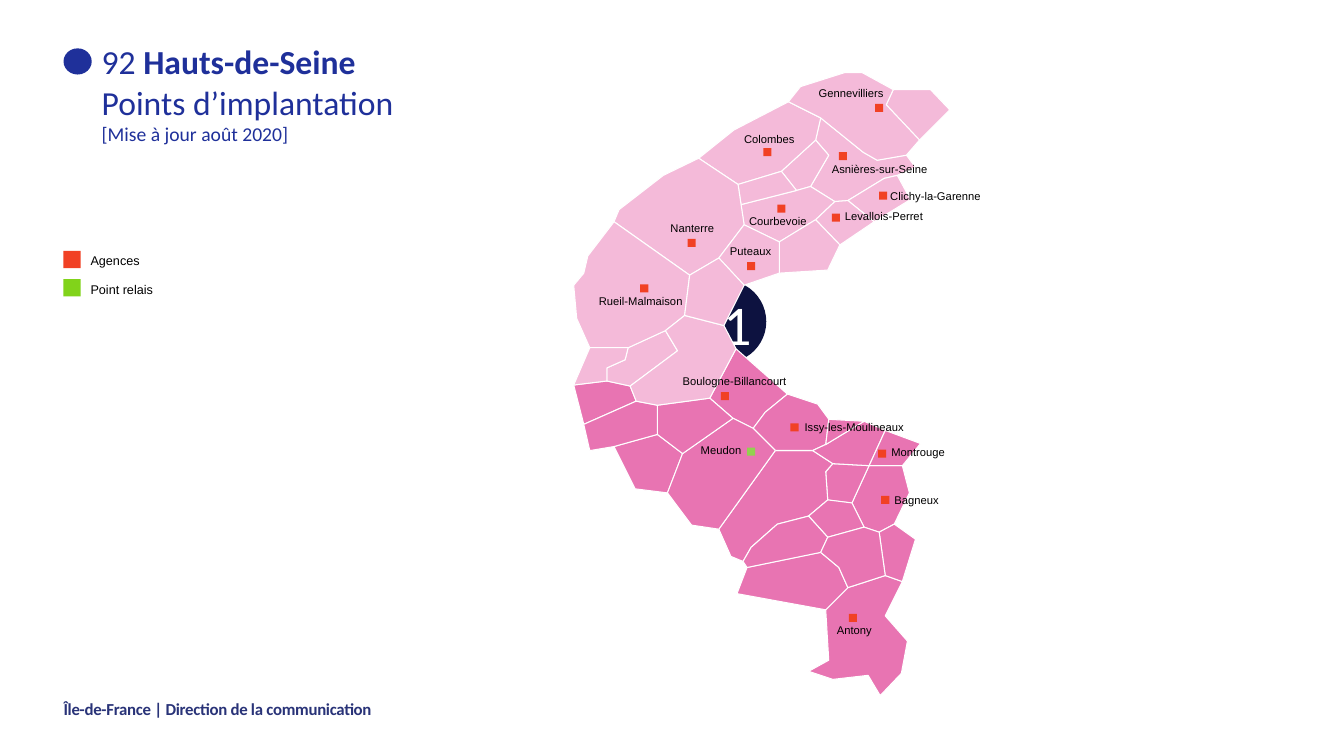
"""Build the Hauts-de-Seine map slide with its agencies and relay point."""
from dataclasses import dataclass

from pptx import Presentation
from pptx import util as u
from pptx.dml.color import RGBColor
from pptx.enum import shapes, text

COLOURS = {
    "south": "E874B2", "north": "F4BAD9", "border": "FFFFFF", "agency": "F14124",
    "relay": "92D050", "relay_key": "81D31A", "title": "1F309A", "footer": "293378",
    "badge": "0D1240", "label": "000000", "number": "FFFFFF",
}
HUNDREDTH = u.Inches(0.01)
MARKER_SIDE = 0.08
KEY_SIDE = 0.17
Junctions = dict[str, tuple[int, int]]

SHARED: Junctions = {
    "1": (569, 382), "2": (602, 378), "3": (625, 383), "4": (631, 398),
    "5": (652, 402), "6": (704, 395), "7": (730, 346),
}
SOUTH: Junctions = SHARED | {
    "a": (802, 666), "b": (826, 674), "c": (861, 670), "d": (873, 690), "e": (894, 668),
    "f": (900, 636), "g": (878, 611), "h": (895, 577), "i": (878, 571), "j": (841, 583),
    "k": (819, 605), "l": (822, 655), "m": (872, 528), "n": (887, 520), "o": (902, 489),
    "p": (895, 462), "q": (585, 447), "r": (862, 462), "s": (845, 499), "t": (857, 523),
    "u": (781, 391), "v": (913, 440), "w": (759, 409), "x": (747, 425), "y": (727, 415),
    "z": (908, 535), "A": (741, 563), "B": (731, 589), "C": (832, 563), "D": (814, 548),
    "E": (826, 460), "F": (819, 468), "G": (821, 496), "H": (630, 485), "I": (662, 489),
    "J": (677, 450), "K": (652, 431), "L": (609, 443), "M": (713, 525), "N": (725, 552),
    "O": (737, 557), "P": (745, 543), "Q": (771, 520), "R": (802, 512), "S": (806, 447),
    "T": (769, 447), "U": (821, 533), "V": (811, 401), "W": (822, 416), "X": (819, 441),
    "Y": (857, 418), "Z": (878, 427), "8": (579, 421), "9": (686, 521),
}
NORTH: Junctions = SHARED | {
    "a": (923, 89), "b": (942, 109), "c": (912, 139), "d": (879, 104), "e": (886, 89),
    "f": (809, 139), "g": (822, 154), "h": (804, 185), "i": (828, 200), "j": (841, 199),
    "k": (877, 177), "l": (890, 174), "m": (908, 166), "n": (899, 154), "o": (870, 159),
    "p": (856, 151), "q": (814, 117), "r": (790, 189), "s": (775, 170), "t": (903, 198),
    "u": (867, 220), "v": (782, 101), "w": (728, 129), "x": (693, 157), "y": (732, 183),
    "z": (809, 218), "A": (773, 240), "B": (738, 223), "C": (735, 203), "D": (672, 348),
    "E": (660, 328), "F": (623, 345), "G": (620, 357), "H": (602, 365), "I": (838, 72),
    "J": (794, 86), "K": (855, 72), "L": (614, 208), "M": (658, 174), "N": (713, 256),
    "O": (684, 273), "P": (609, 220), "Q": (833, 243), "R": (821, 268), "S": (773, 271),
    "T": (738, 283), "U": (583, 254), "V": (679, 313), "W": (585, 345), "X": (572, 316),
    "Y": (569, 283), "Z": (579, 271), "8": (718, 323),
}


@dataclass(frozen=True)
class Region:
    colour: str
    junctions: Junctions
    communes: list[str]


@dataclass(frozen=True)
class Town:
    name: str
    label_at: tuple[float, float]
    marker_at: tuple[float, float]
    kind: str = "agency"
    label_width: float = 1.26


@dataclass(frozen=True)
class Run:
    words: str
    size: float
    bold: bool = False
    break_after: bool = False


REGIONS = [
    Region("south", SOUTH, [
        "abcdefghijkl", "mnoprst", "uwxy67", "mnzhi", "ABkjCD", "srEFG", "HIJKL",
        "MNOPQRGFEST", "stURG", "uVWXSTxw", "YZrESX", "23481", "yxTM9IJ", "Zvpr",
        "OPQRUDA", "tmijCDU", "6yJK5", "WYX", "q845KL"]),
    Region("north", NORTH, [
        "abcde", "fghijklmnopq", "fghrs", "ltujk", "fqvwxys", "hizABCr", "23DEFGH",
        "srCy", "IJvqponcdeK", "ijuQz", "LMxyCBNOP", "QRSAz", "BASTN", "UPOVEFWXYZ",
        "876543DEV", "ONT8V", "1WFGH2"]),
]

TOWNS = [
    Town("Gennevilliers", (8.12, 0.86), (8.68, 1.03)),
    Town("Asnières-sur-Seine", (8.25, 1.61), (8.32, 1.51)),
    Town("Clichy-la-Garenne", (8.83, 1.88), (8.72, 1.9)),
    Town("Levallois-Perret", (8.38, 2.08), (8.25, 2.12)),
    Town("Courbevoie", (7.43, 2.13), (7.71, 2.03)),
    Town("Colombes", (7.38, 1.31), (7.57, 1.47)),
    Town("Nanterre", (6.65, 2.2), (6.82, 2.37), label_width=0.49),
    Town("Puteaux", (7.24, 2.42), (7.41, 2.6)),
    Town("Rueil-Malmaison", (5.94, 2.92), (6.35, 2.82)),
    Town("Boulogne-Billancourt", (6.77, 3.71), (7.15, 3.89)),
    Town("Issy-les-Moulineaux", (7.98, 4.17), (7.84, 4.2)),
    Town("Meudon", (6.95, 4.4), (7.41, 4.44), kind="relay"),
    Town("Bagneux", (8.87, 4.89), (8.74, 4.92)),
    Town("Montrouge", (8.84, 4.42), (8.71, 4.46)),
    Town("Antony", (8.3, 6.18), (8.42, 6.09)),
]


def add_text(slide, paragraphs: list[list[Run]], left: float, top: float, width: float,
             height: float, *, font: str = "Arial", colour: str = "label",
             inset: bool = False, grow: bool = False, middle: bool = False,
             centred: bool = False, space_after: float = 0, tracking: int = 0) -> None:
    frame = slide.shapes.add_textbox(*map(u.Inches, (left, top, width, height))).text_frame
    frame.word_wrap = True
    if grow:
        frame.auto_size = text.MSO_AUTO_SIZE.SHAPE_TO_FIT_TEXT
    if middle:
        frame.vertical_anchor = text.MSO_ANCHOR.MIDDLE
    if not inset:
        frame.margin_left = frame.margin_right = 0
        frame.margin_top = frame.margin_bottom = 0
    for index, runs in enumerate(paragraphs):
        paragraph = frame.add_paragraph() if index else frame.paragraphs[0]
        paragraph.space_after = u.Pt(space_after)
        if centred:
            paragraph.alignment = text.PP_ALIGN.CENTER
        for run in runs:
            piece = paragraph.add_run()
            piece.text = run.words
            piece.font.name = font
            piece.font.size = u.Pt(run.size)
            piece.font.bold = run.bold
            piece.font.color.rgb = RGBColor.from_string(COLOURS[colour])
            if tracking:
                piece._r.get_or_add_rPr().set("spc", str(tracking))
            if run.break_after:
                paragraph.add_line_break()


def paint(part, colour: str) -> None:
    part.shadow.inherit = False
    part.fill.solid()
    part.fill.fore_color.rgb = RGBColor.from_string(COLOURS[colour])


def add_mark(slide, preset: shapes.MSO_SHAPE, colour: str, left: float, top: float,
             width: float, height: float) -> None:
    mark = slide.shapes.add_shape(preset, *map(u.Inches, (left, top, width, height)))
    paint(mark, colour)
    mark.line.fill.background()


def add_commune(slide, region: Region, corners: str) -> None:
    start, *others = [region.junctions[corner] for corner in corners]
    builder = slide.shapes.build_freeform(*start, scale=HUNDREDTH)
    builder.add_line_segments(others, close=True)
    commune = builder.convert_to_shape()
    paint(commune, region.colour)
    commune.line.color.rgb = RGBColor.from_string(COLOURS["border"])
    commune.line.width = u.Pt(0.75)


def main() -> None:
    deck = Presentation()
    deck.slide_width, deck.slide_height = u.Inches(13.33), u.Inches(7.5)
    slide = deck.slides.add_slide(deck.slide_layouts[6])
    square, disc = shapes.MSO_SHAPE.RECTANGLE, shapes.MSO_SHAPE.OVAL

    add_mark(slide, disc, "badge", 6.78, 2.78, 0.82, 0.82)
    add_text(slide, [[Run("1", 40)]], 7.12, 2.86, 0.4, 0.7, font="Calibri",
             colour="number", middle=True, centred=True)
    add_text(slide, [[Run("Île-de-France | Direction de la communication", 12, bold=True)]],
             0.63, 6.9, 4.69, 0.26, font="Calibri", colour="footer", middle=True,
             tracking=-20)
    for region in REGIONS:
        for corners in region.communes:
            add_commune(slide, region, corners)
    for town in TOWNS:
        add_text(slide, [[Run(town.name, 8)]], *town.label_at, town.label_width, 0.13,
                 grow=True, space_after=10)
        add_mark(slide, square, town.kind, *town.marker_at, MARKER_SIDE, MARKER_SIDE)

    title = [Run("92", 24), Run(" Hauts-de-Seine", 24, bold=True, break_after=True),
             Run("Points d’implantation", 24, break_after=True),
             Run("[Mise à jour août 2020]", 14)]
    add_text(slide, [title], 0.91, 0.36, 4.57, 1.62, font="Calibri", colour="title",
             inset=True)
    for key, top in (("agency", 2.49), ("relay_key", 2.77)):
        add_mark(slide, square, key, 0.63, top, KEY_SIDE, KEY_SIDE)
    add_text(slide, [[Run("Agences", 9)], [Run("Point relais", 9)]], 0.8, 2.46, 1.41, 0.55,
             inset=True, grow=True, space_after=10)
    add_mark(slide, disc, "title", 0.63, 0.48, 0.28, 0.26)
    deck.save("out.pptx")


if __name__ == "__main__":
    main()
